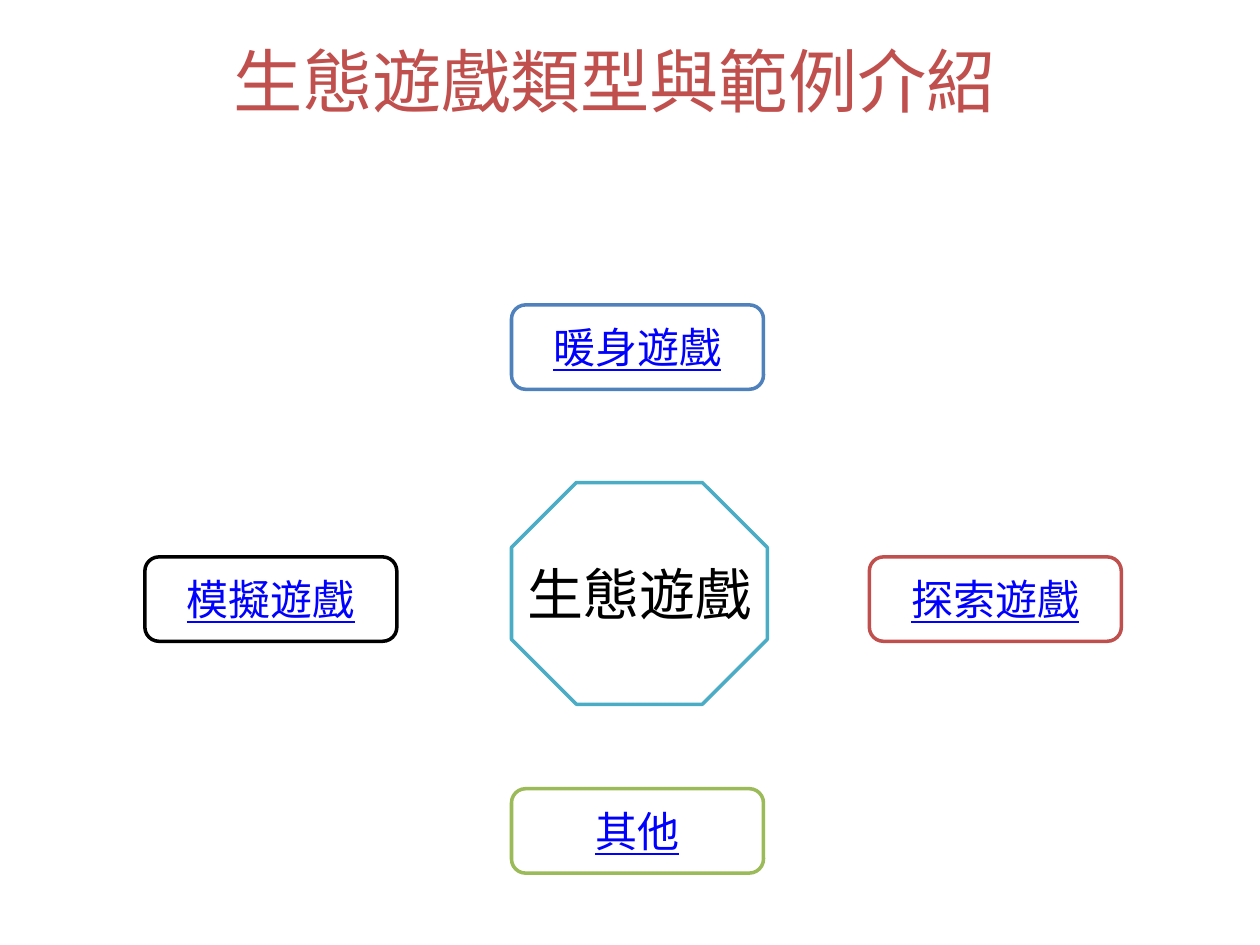
from lxml import etree
from pptx import Presentation
from pptx import util as u
from pptx.dml.color import RGBColor
from pptx.enum import shapes, text
from pptx.oxml.ns import qn

FONT = "Noto Sans CJK SC"
COLORS = {
    "white": "FFFFFF", "black": "000000", "link": "0000FF", "red": "C0504D",
    "blue": "4F81BD", "green": "9BBB59", "teal": "4BACC6",
}
BOX_WIDTH, BOX_HEIGHT = 2, 0.67
CENTER_LEFT, SIDE_TOP = 4.06, 4.42

# Label, left, top, outline colour
GAME_TYPES = [
    ("探索遊戲", 6.9, SIDE_TOP, "red"),
    ("模擬遊戲", 1.15, SIDE_TOP, "black"),
    ("暖身遊戲", CENTER_LEFT, 2.42, "blue"),
    ("其他", CENTER_LEFT, 6.26, "green"),
]


def color(name):
    return RGBColor.from_string(COLORS[name])


def write_text(frame, label, size, color_name, underline=False, wrap=False):
    frame.auto_size = text.MSO_AUTO_SIZE.NONE
    frame.word_wrap = wrap
    frame.vertical_anchor = text.MSO_ANCHOR.MIDDLE
    paragraph = frame.paragraphs[0]
    paragraph.alignment = text.PP_ALIGN.CENTER
    run = paragraph.add_run()
    run.text = label
    run.font.name = FONT
    run.font.size = u.Pt(size)
    run.font.color.rgb = color(color_name)
    if underline:
        run.font.underline = True
    # Chinese characters take the East Asian typeface
    etree.SubElement(run.font._element, qn("a:ea"), typeface=FONT)


def add_title(slide, label):
    title = slide.shapes.title
    title.left, title.top = u.Inches(0.59), u.Inches(0.28)
    title.width, title.height = u.Inches(8.58), u.Inches(0.71)
    write_text(title.text_frame, label, 39.6, "red", wrap=True)


def add_outlined_shape(slide, kind, left, top, width, height, outline, corner):
    shape = slide.shapes.add_shape(
        kind, u.Inches(left), u.Inches(top), u.Inches(width), u.Inches(height))
    shape.adjustments[0] = corner
    shape.shadow.inherit = False
    shape.fill.solid()
    shape.fill.fore_color.rgb = color("white")
    shape.line.color.rgb = color(outline)
    shape.line.width = u.Pt(2)
    return shape


def add_game_type(slide, label, left, top, outline):
    box = add_outlined_shape(slide, shapes.MSO_SHAPE.ROUNDED_RECTANGLE,
                             left, top, BOX_WIDTH, BOX_HEIGHT, outline, 0.167)
    write_text(box.text_frame, label, 24, "link", underline=True)


def add_hub(slide, label):
    hub = add_outlined_shape(slide, shapes.MSO_SHAPE.OCTAGON,
                             CENTER_LEFT, 3.83, 2.03, 1.76, "teal", 0.293)
    write_text(hub.text_frame, label, 32, "black")


def main():
    deck = Presentation()
    deck.slide_width, deck.slide_height = u.Inches(10), u.Inches(7.5)
    slide = deck.slides.add_slide(deck.slide_layouts[5])

    add_title(slide, "生態遊戲類型與範例介紹")

    # Game types around the central topic
    for game_type in GAME_TYPES:
        add_game_type(slide, *game_type)
    add_hub(slide, "生態遊戲")

    deck.save("out.pptx")


if __name__ == "__main__":
    main()
